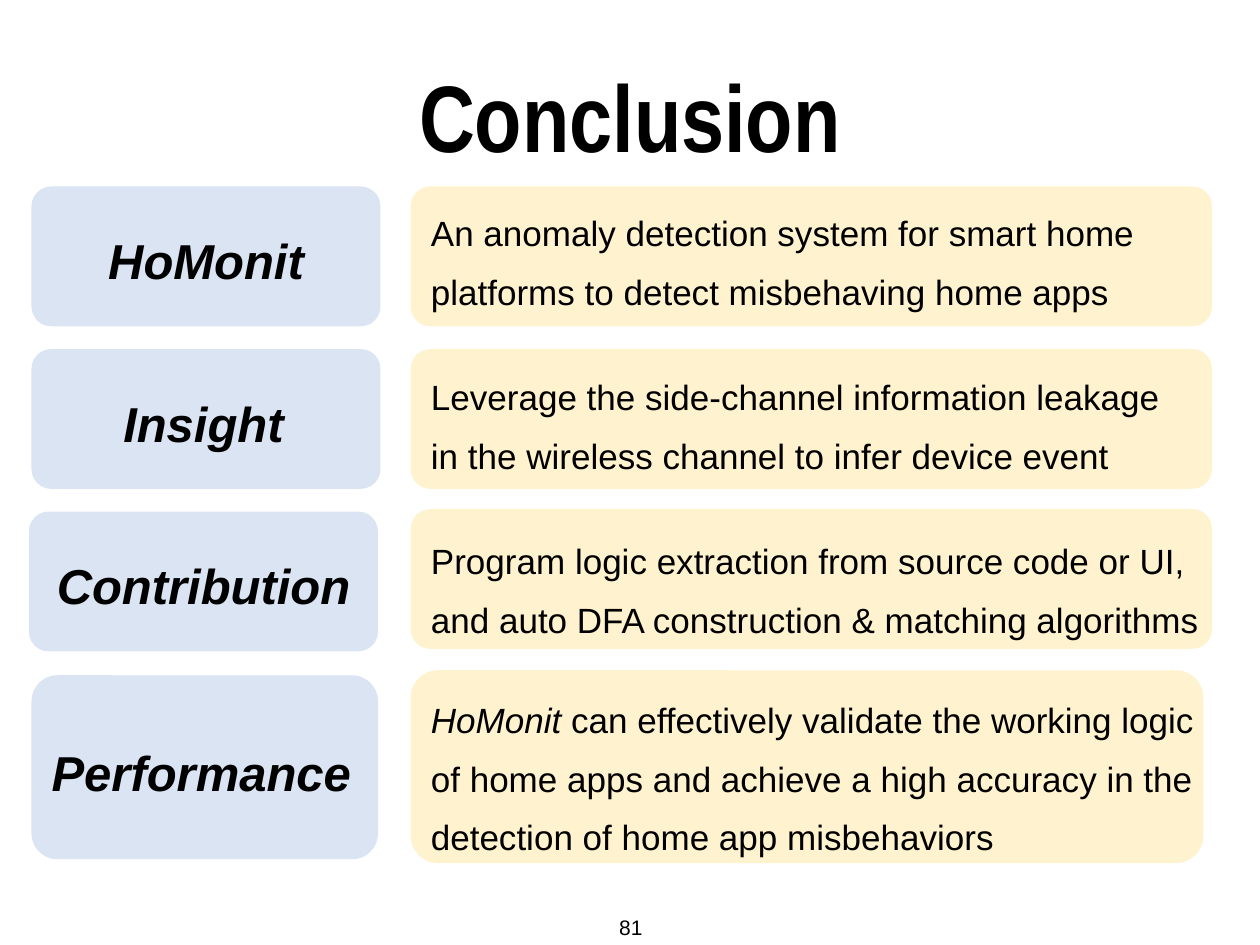
from lxml import etree
from pptx import Presentation
from pptx.dml.color import RGBColor
from pptx.enum.shapes import MSO_SHAPE
from pptx.enum.text import MSO_ANCHOR, MSO_AUTO_SIZE, PP_ALIGN
from pptx.oxml.ns import qn
from pptx.util import Inches, Pt

ROUNDED = MSO_SHAPE.ROUNDED_RECTANGLE
LEFT, CENTER, RIGHT = PP_ALIGN.LEFT, PP_ALIGN.CENTER, PP_ALIGN.RIGHT
TOP, MIDDLE, BOTTOM = MSO_ANCHOR.TOP, MSO_ANCHOR.MIDDLE, MSO_ANCHOR.BOTTOM
FIXED, GROW = MSO_AUTO_SIZE.NONE, MSO_AUTO_SIZE.SHAPE_TO_FIT_TEXT

BLUE, CREAM, BLACK = "DAE3F3", "FFF2CC", "000000"
INSET = Inches(0.05)

TITLE = {"name": "Arial Narrow", "size": Pt(54), "bold": True, "italic": False}
TOPIC = {"name": "Arial", "size": Pt(28), "bold": True, "italic": True}
BODY = {"name": "Arial", "size": Pt(20), "bold": False, "italic": False}
TERM = {**BODY, "italic": True}
NUMBER = {**BODY, "size": Pt(12)}

ROWS = [
    ("HoMonit", (0.25, 1.48, 2.77, 1.11), (0.29, 1.69, 2.69, 0.61), CENTER,
     [("An anomaly detection system for smart home platforms to detect "
       "misbehaving home apps", BODY)],
     (3.26, 1.48, 6.36, 1.11), (3.37, 1.5, 6.08, 0.99)),
    ("Insight", (0.25, 2.77, 2.77, 1.11), (0.27, 2.98, 2.69, 0.61), CENTER,
     [("Leverage the side-channel information leakage in the wireless channel "
       "to infer device event", BODY)],
     (3.26, 2.77, 6.36, 1.11), (3.37, 2.8, 6.08, 1.04)),
    ("Contribution", (0.23, 4.06, 2.77, 1.11), (0.27, 4.27, 2.69, 0.61), CENTER,
     [("Program logic extraction from source code or UI, and auto DFA "
       "construction & matching algorithms", BODY)],
     (3.26, 4.04, 6.36, 1.11), (3.37, 4.1, 6.38, 0.99)),
    ("Performance", (0.25, 5.36, 2.75, 1.46), (0.36, 5.75, 2.55, 0.67), LEFT,
     [("HoMonit", TERM),
      (" can effectively validate the working logic of home apps and achieve "
       "a high accuracy in the detection of home app misbehaviors", BODY)],
     (3.26, 5.32, 6.29, 1.53), (3.37, 5.36, 6.4, 1.51)),
]


def paint(color_format, color):
    """Set a colour from a hex string."""
    color_format.rgb = RGBColor.from_string(color)


def set_all(target, values):
    """Set every attribute named in a dict."""
    for attribute, value in values.items():
        setattr(target, attribute, value)


def write(frame, runs, align=LEFT, spacing=1.0, anchor=TOP, wrap=True, fit=GROW):
    """Fill a text frame with one paragraph of formatted runs."""
    set_all(frame, {
        "margin_left": INSET, "margin_right": INSET,
        "margin_top": INSET, "margin_bottom": INSET,
        "vertical_anchor": anchor, "word_wrap": wrap, "auto_size": fit,
    })
    paragraph = frame.paragraphs[0]
    set_all(paragraph, {"alignment": align, "line_spacing": spacing})
    for wording, style in runs:
        run = paragraph.add_run()
        run.text = wording
        set_all(run.font, style)
        paint(run.font.color, BLACK)


def add_title(slide, wording, area):
    """Place the heading in the title placeholder."""
    heading = slide.shapes.title
    set_all(heading, dict(zip(("left", "top", "width", "height"), map(Inches, area))))
    write(heading.text_frame, [(wording, TITLE)], CENTER, 1.1, BOTTOM, fit=FIXED)


def add_card(slide, area, color):
    """Add a slightly transparent rounded card."""
    card = slide.shapes.add_shape(ROUNDED, *map(Inches, area))
    card.adjustments[0] = 0.141
    card.shadow.inherit = False
    card.line.fill.background()
    card.fill.solid()
    paint(card.fill.fore_color, color)
    tint = card.element.spPr.find(qn("a:solidFill"))[0]
    etree.SubElement(tint, qn("a:alpha"), val="95000")


def add_text(slide, area, runs, **layout):
    """Add a text box with formatted runs."""
    box = slide.shapes.add_textbox(*map(Inches, area))
    write(box.text_frame, runs, **layout)


def main():
    """Build the conclusion slide."""
    deck = Presentation()
    set_all(deck, {"slide_width": Inches(10), "slide_height": Inches(7.5)})
    slide = deck.slides.add_slide(deck.slide_layouts[5])
    add_title(slide, "Conclusion", (0, 0.54, 10, 0.87))
    for topic, topic_card, topic_area, align, detail, detail_card, detail_area in ROWS:
        add_card(slide, topic_card, BLUE)
        add_text(slide, topic_area, [(topic, TOPIC)], align=align, spacing=1.2)
        add_card(slide, detail_card, CREAM)
        add_text(slide, detail_area, detail, spacing=1.4)
    add_text(slide, (4.84, 7.21, 0.31, 0.3), [("81", NUMBER)],
             align=RIGHT, anchor=MIDDLE, wrap=False)
    deck.save("out.pptx")


if __name__ == "__main__":
    main()
